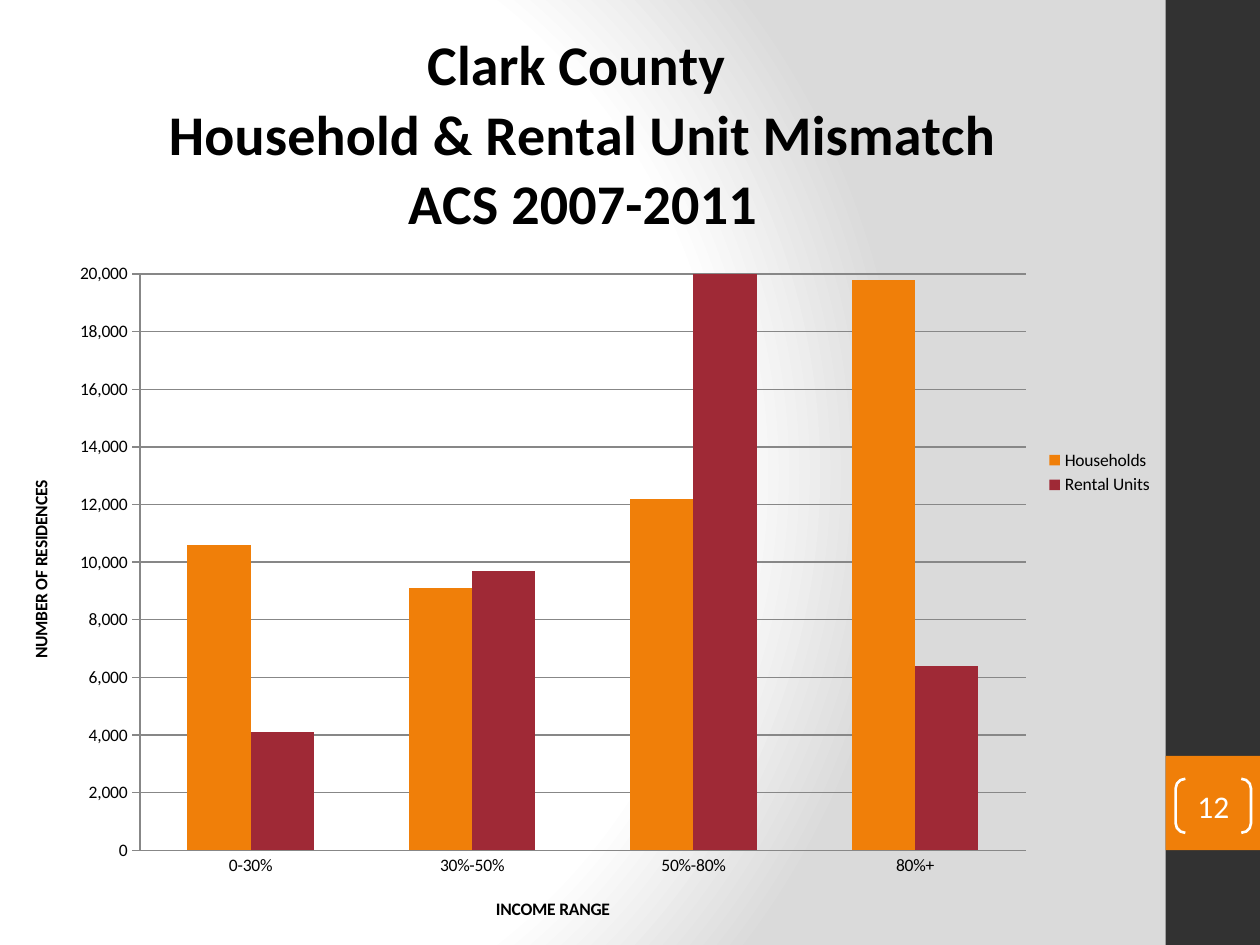
from lxml import etree
from pptx import Presentation, util as u
from pptx.chart.data import CategoryChartData
from pptx.dml.color import RGBColor
from pptx.enum import chart as ch, shapes, text
from pptx.oxml import parse_xml
from pptx.oxml.ns import nsdecls, qn

THEME = {
    "font": "Calibri", "ink": "000000", "paper": "FFFFFF", "shade": "DADADA",
    "dark": "323232", "orange": "F07F09", "red": "9F2936", "grid": "878787",
    "title": 32, "number": 18, "label": 10,
}
TITLE = ["Clark County ", "Household & Rental Unit Mismatch", "ACS 2007-2011"]
INCOME_RANGES = ["0-30%", "30%-50%", "50%-80%", "80%+"]
SERIES = [
    ("Households", "orange", [10600, 9100, 12200, 19800]),
    ("Rental Units", "red", [4100, 9700, 30300, 6400]),
]
AXIS_TITLES = {"category": "INCOME RANGE", "value": "NUMBER OF RESIDENCES"}
SLIDE_NUMBER = "12"
PLOT_LAYOUT = {"x": 0.12, "y": 0.29, "w": 0.76, "h": 0.61}  # shares of the chart

WIDTH, HEIGHT, BAND = u.Cm(25.4), u.Cm(19.05), u.Cm(1.9)
BAND_LEFT = WIDTH - BAND


def color(name):
    return RGBColor.from_string(THEME[name])


def style(font, size, ink="ink", bold=False):
    font.name, font.size, font.bold = THEME["font"], u.Pt(THEME[size]), bold
    font.color.rgb = color(ink)


def write(frame, lines, size, ink="ink", bold=False):
    for index, line in enumerate(lines):
        paragraph = frame.add_paragraph() if index else frame.paragraphs[0]
        paragraph.alignment = text.PP_ALIGN.CENTER
        run = paragraph.add_run()
        run.text = line
        style(run.font, size, ink, bold)


def paint_background(slide):
    """Radial gradient whose white centre lies left of the middle."""
    slide.background.fill.gradient()
    gradient = slide.element.find(".//" + qn("a:gradFill"))
    stops = "".join(
        f'<a:gs pos="{position * 1000}"><a:srgbClr val="{THEME[name]}"/></a:gs>'
        for position, name in [(0, "paper"), (75, "paper"), (100, "shade")])
    gradient.getparent().replace(gradient, parse_xml(
        f'<a:gradFill {nsdecls("a")} rotWithShape="1"><a:gsLst>{stops}</a:gsLst>'
        '<a:path path="circle"><a:fillToRect l="20000" t="50000" r="100000" b="50000"/>'
        '</a:path></a:gradFill>'))


def add_block(slide, top, height, fill):
    block = slide.shapes.add_shape(
        shapes.MSO_SHAPE.RECTANGLE, BAND_LEFT, top, BAND, height)
    block.shadow.inherit = False
    block.fill.solid()
    block.fill.fore_color.rgb = color(fill)
    block.line.fill.background()


def add_slide_number(slide):
    bracket = slide.shapes.add_shape(
        shapes.MSO_SHAPE.DOUBLE_BRACKET, u.Cm(23.7), u.Cm(15.7), u.Cm(1.52), u.Cm(1.09))
    bracket.adjustments[0] = 0.18
    bracket.shadow.inherit = False
    bracket.fill.background()
    bracket.line.color.rgb = color("paper")
    bracket.line.width = u.Pt(1.5)
    frame = bracket.text_frame
    frame.margin_left = frame.margin_right = frame.margin_top = frame.margin_bottom = 0
    frame.vertical_anchor = text.MSO_ANCHOR.MIDDLE
    write(frame, [SLIDE_NUMBER], "number", "paper")


def place_plot(chart):
    """Fix the inner plot area, leaving room for titles and legend."""
    plot_area = chart.element.find(".//" + qn("c:plotArea"))
    for old in plot_area.findall(qn("c:layout")):
        plot_area.remove(old)
    layout = parse_xml(f'<c:layout {nsdecls("c")}><c:manualLayout/></c:layout>')
    settings = {"layoutTarget": "inner", "xMode": "edge", "yMode": "edge", **PLOT_LAYOUT}
    for tag, value in settings.items():
        etree.SubElement(layout[0], qn("c:" + tag)).set("val", str(value))
    plot_area.insert(0, layout)


def add_mismatch_chart(slide):
    data = CategoryChartData(number_format="#,##0")
    data.categories = INCOME_RANGES
    for name, _, values in SERIES:
        data.add_series(name, values)
    chart = slide.shapes.add_chart(
        ch.XL_CHART_TYPE.COLUMN_CLUSTERED, 0, 0, BAND_LEFT, HEIGHT, data).chart
    style(chart.font, "label")
    chart.has_title = True
    write(chart.chart_title.text_frame, TITLE, "title", bold=True)
    chart.chart_title.include_in_layout = False

    chart.has_legend = True
    chart.legend.position = ch.XL_LEGEND_POSITION.RIGHT
    chart.legend.include_in_layout = False
    style(chart.legend.font, "label")

    plot = chart.plots[0]
    plot.gap_width, plot.overlap, plot.vary_by_categories = 150, 0, False
    for series, (_, fill, _) in zip(plot.series, SERIES):
        series.invert_if_negative = False
        series.format.fill.solid()
        series.format.fill.fore_color.rgb = color(fill)

    category, value = chart.category_axis, chart.value_axis
    for axis, name in ((category, "category"), (value, "value")):
        write(axis.axis_title.text_frame, [AXIS_TITLES[name]], "label", bold=True)
        style(axis.tick_labels.font, "label")
        axis.format.line.color.rgb = color("grid")
    category.major_tick_mark = ch.XL_TICK_MARK.NONE
    value.major_tick_mark = ch.XL_TICK_MARK.OUTSIDE
    value.minimum_scale, value.maximum_scale, value.major_unit = 0, 20000, 2000
    value.tick_labels.number_format = "#,##0"
    value.tick_labels.number_format_is_linked = False
    value.has_major_gridlines = True
    value.major_gridlines.format.line.color.rgb = color("grid")
    place_plot(chart)


def main():
    presentation = Presentation()
    presentation.slide_width, presentation.slide_height = WIDTH, HEIGHT
    slide = presentation.slides.add_slide(presentation.slide_layouts[6])
    paint_background(slide)
    add_block(slide, 0, HEIGHT, "dark")
    add_block(slide, u.Cm(15.24), BAND, "orange")
    add_slide_number(slide)
    add_mismatch_chart(slide)
    presentation.save("out.pptx")


if __name__ == "__main__":
    main()
